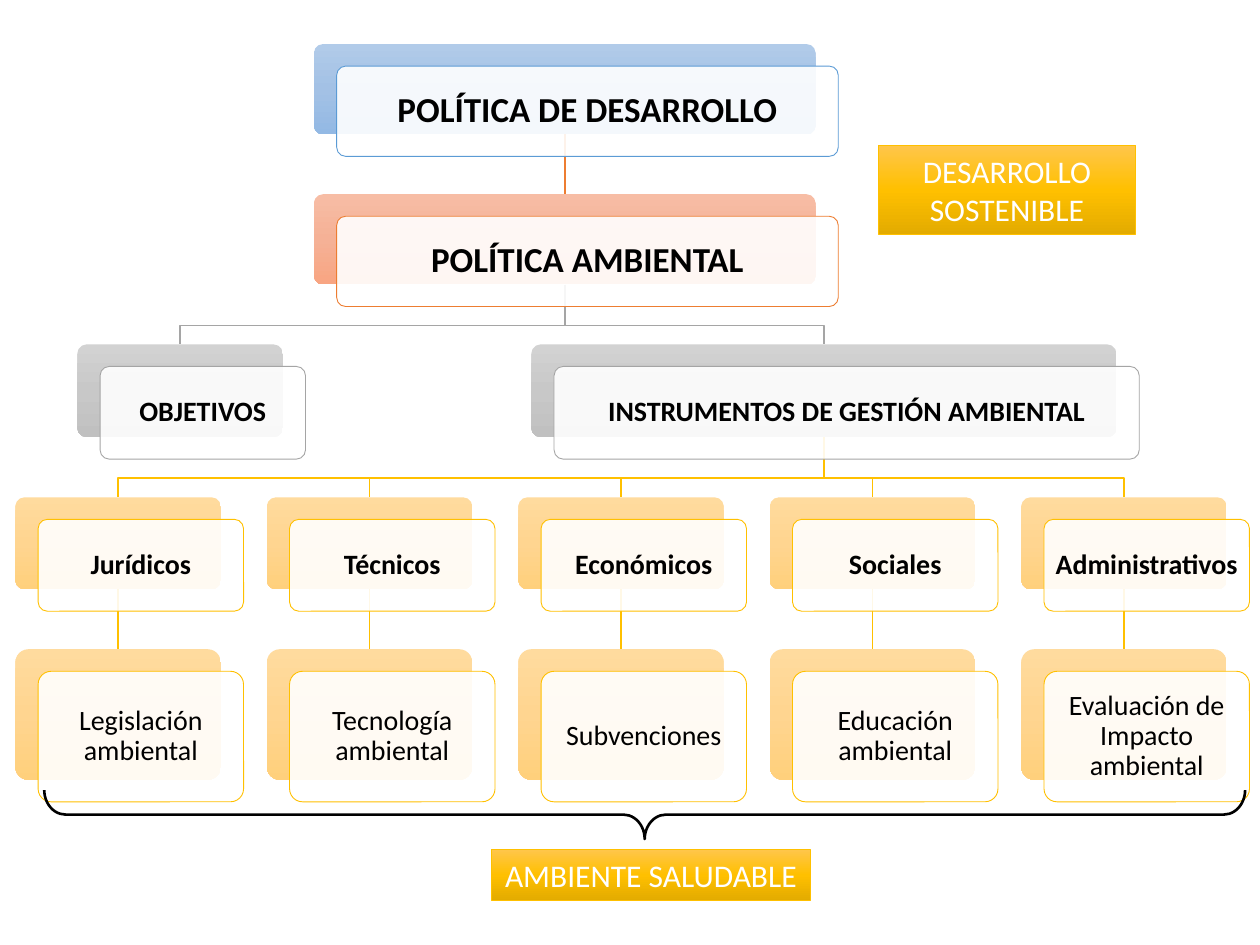
from dataclasses import dataclass

from lxml import etree
from pptx import Presentation
from pptx.dml.color import RGBColor
from pptx.enum import shapes as kinds, text as layout
from pptx.oxml import ns
from pptx.util import Pt

BLUE = ("5B9BD5", ("B1CBE9", "A3C1E5", "93B9E4"))
ORANGE = ("ED7D31", ("F7BDA5", "F5B196", "F8A582"))
GRAY = ("A5A5A5", ("D2D2D2", "C8C8C8", "C0C0C0"))
YELLOW = ("FFC000", ("FFDB9E", "FFD590", "FFD07C"))
GOLD = ("FFC000", ("FFC64B", "FFC000", "E3AB00"))

SHIFT_X, SHIFT_Y = 13, 12.6
BUS_GAP = 10.8
COLUMN_LEFT, COLUMN_PITCH, COLUMN_WIDTH = 8.8, 143.7, 117.4
INSTRUMENTS = [
    ("Jurídicos", "Legislación ambiental"),
    ("Técnicos", "Tecnología ambiental"),
    ("Económicos", "Subvenciones"),
    ("Sociales", "Educación ambiental"),
    ("Administrativos", "Evaluación de Impacto ambiental"),
]


@dataclass
class Card:
    """A captioned node of the hierarchy, located by its back panel."""
    caption: str
    left: float
    top: float
    width: float
    height: float
    theme: tuple
    size: float = 16
    bold: bool = True

    @property
    def center(self):
        """Return the horizontal middle of the back panel."""
        return self.left + self.width / 2

    @property
    def bottom(self):
        """Return the lower edge of the back panel."""
        return self.top + self.height


def color(value):
    """Turn a hex string into a colour."""
    return RGBColor.from_string(value)


def set_line(shape, value, width):
    """Give a shape or connector a solid line."""
    shape.line.color.rgb = color(value)
    shape.line.width = Pt(width)


def add_panel(page, kind, left, top, width, height):
    """Add a preset shape without shadow."""
    shape = page.shapes.add_shape(kind, Pt(left), Pt(top), Pt(width), Pt(height))
    shape.shadow.inherit = False
    return shape


def fill_gradient(shape, values):
    """Fill a shape from top to bottom with evenly spaced colours."""
    shape.fill.gradient()
    shape.fill.gradient_angle = 270
    stops = shape._element.spPr.find(".//" + ns.qn("a:gsLst"))
    for stop in list(stops):
        stops.remove(stop)
    for index, value in enumerate(values):
        position = str(100000 * index // (len(values) - 1))
        stop = etree.SubElement(stops, ns.qn("a:gs"), pos=position)
        etree.SubElement(stop, ns.qn("a:srgbClr"), val=value)


def write(shape, caption, size, value, bold=False, spacing=1.0):
    """Put a centred caption in a shape."""
    frame = shape.text_frame
    frame.text = caption
    frame.word_wrap = True
    frame.vertical_anchor = layout.MSO_ANCHOR.MIDDLE
    frame.margin_left = frame.margin_right = Pt(3)
    frame.margin_top = frame.margin_bottom = Pt(3)
    para = frame.paragraphs[0]
    para.alignment = layout.PP_ALIGN.CENTER
    para.line_spacing = spacing
    para.font.name = "Calibri"
    para.font.size = Pt(size)
    para.font.bold = bold
    para.font.color.rgb = color(value)


def draw_card(page, card):
    """Draw a coloured panel with a translucent captioned panel over it."""
    rounded = kinds.MSO_SHAPE.ROUNDED_RECTANGLE
    back = add_panel(page, rounded, card.left, card.top, card.width, card.height)
    fill_gradient(back, card.theme[1])
    back.line.fill.background()
    front = add_panel(page, rounded, card.left + SHIFT_X, card.top + SHIFT_Y,
                      card.width, card.height)
    front.fill.solid()
    front.fill.fore_color.rgb = color("FFFFFF")
    tint = front._element.spPr.find(".//" + ns.qn("a:srgbClr"))
    etree.SubElement(tint, ns.qn("a:alpha"), val="90000")
    set_line(front, card.theme[0], 0.5)
    for panel in (back, front):
        panel.adjustments[0] = 0.1
    write(front, card.caption, card.size, "000000", card.bold, 0.9)


def draw_link(page, parent, child):
    """Join a parent to its child, straight or by way of a shared bus."""
    start = Pt(parent.center), Pt(parent.bottom)
    end = Pt(child.center), Pt(child.top)
    if start[0] == end[0]:
        link = page.shapes.add_connector(kinds.MSO_CONNECTOR.STRAIGHT, *start, *end)
        etree.SubElement(link._element.spPr, ns.qn("a:effectLst"))
    else:
        bus = Pt(child.top - BUS_GAP)
        builder = page.shapes.build_freeform(*start)
        builder.add_line_segments([(start[0], bus), (end[0], bus), end], close=False)
        link = builder.convert_to_shape()
        link.shadow.inherit = False
        link.fill.background()
    set_line(link, child.theme[0], 1)


def draw_hierarchy(page):
    """Draw the policy tree, its links behind its cards."""
    policy = Card("POLÍTICA DE DESARROLLO", 179.4, 25.2, 286.6, 51.6, BLUE, 20)
    environment = Card("POLÍTICA AMBIENTAL", 179.4, 111, 286.6, 51.6, ORANGE, 20)
    goals = Card("OBJETIVOS", 44.2, 196.8, COLUMN_WIDTH, 53, GRAY)
    tools = Card("INSTRUMENTOS DE GESTIÓN AMBIENTAL", 303.6, 196.8, 334.4, 53, GRAY)
    cards = [policy, environment, goals, tools]
    links = [(policy, environment), (environment, goals), (environment, tools)]
    for index, (kind, example) in enumerate(INSTRUMENTS):
        left = COLUMN_LEFT + index * COLUMN_PITCH
        head = Card(kind, left, 284.2, COLUMN_WIDTH, 52.5, YELLOW)
        leaf = Card(example, left, 371, COLUMN_WIDTH, 74.6, YELLOW, bold=False)
        cards += [head, leaf]
        links += [(tools, head), (head, leaf)]
    for parent, child in links:
        draw_link(page, parent, child)
    for card in cards:
        draw_card(page, card)


def draw_brace(page, left, top, width, height):
    """Draw a brace that opens upwards across the given box."""
    brace = add_panel(page, kinds.MSO_SHAPE.RIGHT_BRACE,
                      left + (width - height) / 2, top + (height - width) / 2,
                      height, width)
    brace.rotation = 90
    brace.adjustments[0] = 0.435
    brace.adjustments[1] = 0.5
    brace.fill.background()
    set_line(brace, "000000", 1.5)


def draw_outcome(page, caption, left, top, width, height):
    """Draw a gold box that names an outcome."""
    box = add_panel(page, kinds.MSO_SHAPE.RECTANGLE, left, top, width, height)
    fill_gradient(box, GOLD[1])
    set_line(box, GOLD[0], 0.5)
    write(box, caption, 18, "FFFFFF")


def main():
    """Build the slide and save it."""
    deck = Presentation()
    deck.slide_width, deck.slide_height = Pt(720), Pt(540)
    page = deck.slides.add_slide(deck.slide_layouts[6])
    draw_hierarchy(page)
    draw_brace(page, 25.3, 451.5, 686.2, 28)
    draw_outcome(page, "AMBIENTE SALUDABLE", 280.6, 485.5, 182.8, 29)
    draw_outcome(page, "DESARROLLO SOSTENIBLE", 501.8, 83, 147.2, 51)
    deck.save("out.pptx")


if __name__ == "__main__":
    main()
